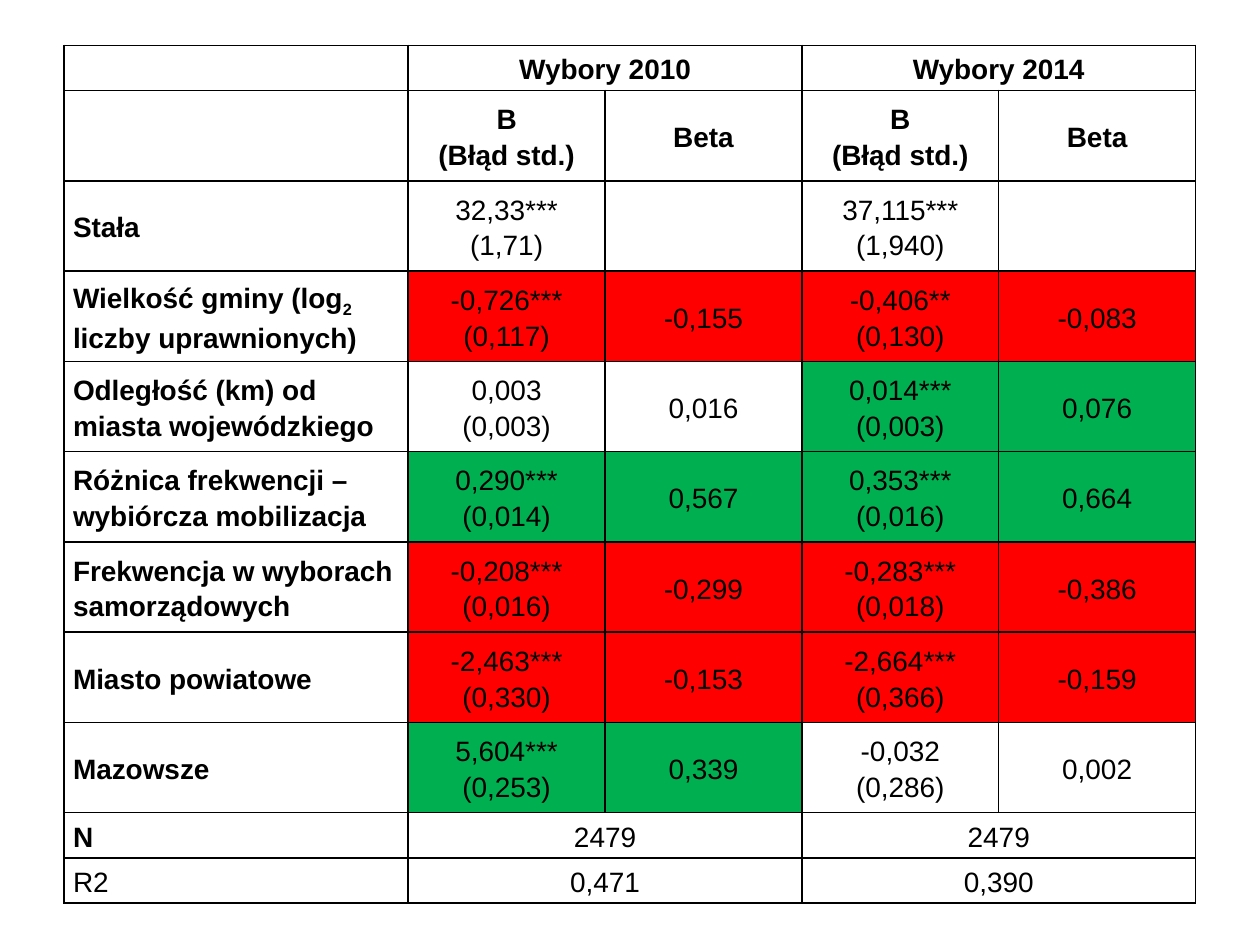
"""Build a slide with a table of regression results for two elections."""
from dataclasses import dataclass
from typing import Optional

from lxml.etree import SubElement
from pptx import Presentation
from pptx.dml.color import RGBColor
from pptx.enum.text import MSO_ANCHOR as Anchor, PP_ALIGN as Align
from pptx.oxml.ns import qn
from pptx.util import Inches, Pt

BLACK = RGBColor(0x00, 0x00, 0x00)
RED = RGBColor(0xFF, 0x00, 0x00)
GREEN = RGBColor(0x00, 0xB0, 0x50)

LEFT, TOP, WIDTH, HEIGHT = 0.51, 0.36, 8.98, 6.81
LABEL = 2.73


@dataclass
class Effect:
    """One model's estimate, its standard error and its beta."""
    b: str
    error: str
    beta: str = ""

    def tint(self) -> Optional[RGBColor]:
        """Colour a significant effect by its sign."""
        if not self.beta or "*" not in self.b:
            return None
        return RED if self.b.startswith("-") else GREEN


@dataclass
class Factor:
    """One predictor with its effect in each election."""
    name: str
    first: Effect
    second: Effect


FACTORS = [
    Factor("Stała", Effect("32,33***", "1,71"), Effect("37,115***", "1,940")),
    Factor("Wielkość gminy (log|2| liczby uprawnionych)",
           Effect("-0,726***", "0,117", "-0,155"), Effect("-0,406**", "0,130", "-0,083")),
    Factor("Odległość (km) od miasta wojewódzkiego",
           Effect("0,003", "0,003", "0,016"), Effect("0,014***", "0,003", "0,076")),
    Factor("Różnica frekwencji – wybiórcza mobilizacja",
           Effect("0,290***", "0,014", "0,567"), Effect("0,353***", "0,016", "0,664")),
    Factor("Frekwencja w wyborach samorządowych",
           Effect("-0,208***", "0,016", "-0,299"), Effect("-0,283***", "0,018", "-0,386")),
    Factor("Miasto powiatowe",
           Effect("-2,463***", "0,330", "-0,153"), Effect("-2,664***", "0,366", "-0,159")),
    Factor("Mazowsze",
           Effect("5,604***", "0,253", "0,339"), Effect("-0,032", "0,286", "0,002")),
]


def write(cell, text: str, *, bold: bool = False, align=Align.CENTER, fill=None) -> None:
    """Fill a cell with lines of text, where bars enclose a subscript."""
    cell.vertical_anchor = Anchor.MIDDLE
    cell.margin_left = cell.margin_right = Inches(0.07)
    cell.margin_top = cell.margin_bottom = 0
    if fill is not None:
        cell.fill.solid()
        cell.fill.fore_color.rgb = fill
    frame = cell.text_frame
    for row, line in enumerate(text.split("\n")):
        para = frame.add_paragraph() if row else frame.paragraphs[0]
        para.alignment = align
        para.line_spacing = 1.15
        for part, piece in enumerate(line.split("|")):
            if not piece:
                continue
            run = para.add_run()
            run.text = piece
            font = run.font
            font.name, font.size, font.bold = "Arial", Pt(16), bold
            font.color.rgb = BLACK
            if part % 2:
                run._r.get_or_add_rPr().set("baseline", "-25000")


def border(cell) -> None:
    """Draw a thin black line on each side of a cell."""
    props = cell._tc.get_or_add_tcPr()
    for side in ("lnL", "lnR", "lnT", "lnB"):
        line = SubElement(props, qn(f"a:{side}"), w=str(Pt(1)))
        SubElement(SubElement(line, qn("a:solidFill")), qn("a:srgbClr"), val=str(BLACK))


def span(table, row: int, name: str, pair: tuple[str, str], *, strong: bool, bold: bool) -> None:
    """Write a row whose values each cover one election's two columns."""
    write(table.cell(row, 0), name, bold=strong, align=Align.LEFT)
    for col, text in zip((1, 3), pair):
        table.cell(row, col).merge(table.cell(row, col + 1))
        write(table.cell(row, col), text, bold=bold)


def factor(table, row: int, item: Factor) -> None:
    """Write a predictor's row."""
    write(table.cell(row, 0), item.name, bold=True, align=Align.LEFT)
    for col, effect in zip((1, 3), (item.first, item.second)):
        tint = effect.tint()
        write(table.cell(row, col), f"{effect.b}\n({effect.error})", fill=tint)
        write(table.cell(row, col + 1), effect.beta, fill=tint)


def main() -> None:
    """Build and save the slide."""
    deck = Presentation()
    deck.slide_width, deck.slide_height = Inches(10), Inches(7.5)
    slide = deck.slides.add_slide(deck.slide_layouts[6])
    spans = [0, len(FACTORS) + 2, len(FACTORS) + 3]
    count = len(FACTORS) + 4
    table = slide.shapes.add_table(
        count, 5, Inches(LEFT), Inches(TOP), Inches(WIDTH), Inches(HEIGHT)).table
    table.first_row = table.horz_banding = False

    for col, column in enumerate(table.columns):
        column.width = Inches((WIDTH - LABEL) / 4 if col else LABEL)
    unit = HEIGHT / (2 * count - len(spans))
    for row, line in enumerate(table.rows):
        line.height = Inches(unit if row in spans else 2 * unit)
    for cell in table.iter_cells():
        border(cell)
        cell.fill.background()

    span(table, spans[0], "", ("Wybory 2010", "Wybory 2014"), strong=True, bold=True)
    for col, text in enumerate(["", *["B\n(Błąd std.)", "Beta"] * 2]):
        write(table.cell(1, col), text, bold=True)
    for row, item in enumerate(FACTORS, 2):
        factor(table, row, item)
    span(table, spans[1], "N", ("2479", "2479"), strong=True, bold=False)
    span(table, spans[2], "R2", ("0,471", "0,390"), strong=False, bold=False)
    deck.save("out.pptx")


if __name__ == "__main__":
    main()
